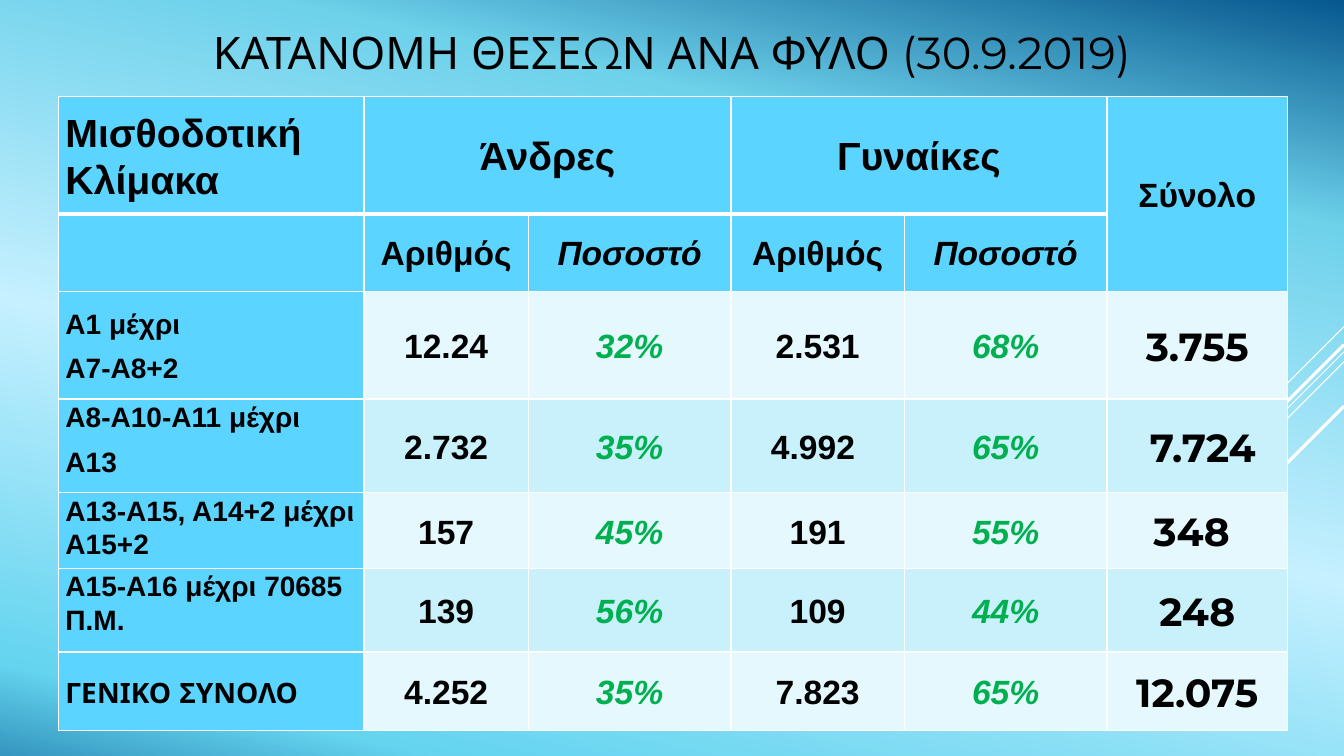
import copy

from lxml import etree
from pptx import Presentation
from pptx.dml.color import RGBColor
from pptx.enum import shapes, text
from pptx.oxml import ns
from pptx.util import Inches, Pt

TITLE = "ΚΑΤΑΝΟΜΗ ΘΕΣΕΩΝ ΑΝΑ ΦΥΛΟ (30.9.2019)"
ROWS = [
    ["Μισθοδοτική Κλίμακα", "Άνδρες", "", "Γυναίκες", "", "Σύνολο"],
    ["", "Αριθμός", "Ποσοστό", "Αριθμός", "Ποσοστό", ""],
    ["Α1 μέχρι\nΑ7-Α8+2", "12.24", "32%", "2.531", "68%", "3.755"],
    ["Α8-Α10-Α11 μέχρι\nΑ13", "2.732", "35%", "4.992 ", "65%", " 7.724"],
    ["Α13-Α15, Α14+2 μέχρι Α15+2", "157", "45%", "191", "55%", "348 "],
    ["Α15-Α16 μέχρι 70685 Π.Μ.", "139", "56%", "109", "44%", "248"],
    ["ΓΕΝΙΚΟ ΣΥΝΟΛΟ", "4.252", "35%", "7.823", "65%", "12.075"],
]
COL_WIDTHS = [3.03, 1.63, 2.01, 1.72, 2.01, 1.79]
ROW_HEIGHTS = [1.16, 0.77, 1.07, 0.93, 0.75, 0.83, 0.78]
MERGES = [((0, 1), (0, 2)), ((0, 3), (0, 4)), ((0, 5), (1, 5))]
TOP_ALIGNED = {(3, 0), (4, 0), (5, 0)}
TOTAL_COL, LAST_ROW = 5, 6

C = {"header": "5BD4FF", "light": "E4F8FD", "tint": "C8F1FB",
     "text": "000000", "percent": "00B050", "line": "FFFFFF"}
BACKGROUND = [(0, "06588E"), (22, "6ED2EB"), (56, "C5F0FF"),
              (91, "64D4EF"), (100, "3596BF")]
# Diagonals at 45 degrees: y at the right edge, horizontal run, weight
DIAGONALS = [(3.24, 1, 0.75), (3.49, 3.26, 0.75), (3.59, 2.07, 0.75),
             (3.42, 1.91, 2.25), (4.03, 1.39, 2.25)]
WIDTH, HEIGHT = 13.33, 7.5


def rgb(name):
    return RGBColor.from_string(C[name])


def paint_background(s):
    fill = s.background.fill
    fill.gradient()
    fill.gradient_angle = 258
    stops = fill.gradient_stops
    first = stops[0]
    first.color.rgb = RGBColor.from_string(BACKGROUND[0][1])
    gs_list = s.background._cSld.find(".//" + ns.qn("a:gsLst"))
    template = copy.deepcopy(gs_list[0])
    for gs in list(gs_list):
        gs_list.remove(gs)
    for pos, color in BACKGROUND:
        gs = copy.deepcopy(template)
        gs.set("pos", str(pos * 1000))
        gs[0].set("val", color)
        gs_list.append(gs)


def add_diagonal(s, y, run, weight):
    line = s.shapes.add_connector(
        shapes.MSO_CONNECTOR.STRAIGHT, Inches(WIDTH), Inches(y),
        Inches(WIDTH - run), Inches(y + run))
    line.line.color.rgb = rgb("line")
    line.line.width = Pt(weight)
    etree.SubElement(line._element.spPr, ns.qn("a:effectLst"))


def set_borders(cell, weights):
    """Draw the left, right, top and bottom borders, ahead of the cell fill."""
    tc_pr = cell._tc.get_or_add_tcPr()
    for i, (side, weight) in enumerate(zip("LRTB", weights)):
        ln = etree.Element(ns.qn("a:ln" + side), w=str(Pt(weight)))
        solid = etree.SubElement(ln, ns.qn("a:solidFill"))
        etree.SubElement(solid, ns.qn("a:srgbClr"), val=C["line"])
        tc_pr.insert(i, ln)


def font_style(row, col):
    """Return size, font name, colour and italic for a cell."""
    percent = row > 0 and col in (2, 4)
    if row == 0:
        size = 24 if col == TOTAL_COL else 28
    elif col == 0:
        size = 20
    else:
        size = 28 if col == TOTAL_COL else 24
    montserrat = (row > 1 and col == TOTAL_COL) or (row, col) == (LAST_ROW, 0)
    color = "percent" if percent and row > 1 else "text"
    return size, "Montserrat" if montserrat else "Arial", color, percent


def fill_color(row, col):
    if row < 2 or col == 0:
        return "header"
    return "tint" if row % 2 else "light"


def format_cell(cell, row, col):
    cell.fill.solid()
    cell.fill.fore_color.rgb = rgb(fill_color(row, col))
    thick = col != TOTAL_COL
    set_borders(cell, (1, 1, 3 if thick and row == 1 else 1,
                       3 if thick and row == 0 else 1))
    cell.margin_left = cell.margin_right = Inches(0.07)
    cell.margin_top, cell.margin_bottom = Inches(0.01), 0
    top = (row, col) in TOP_ALIGNED
    cell.vertical_anchor = text.MSO_ANCHOR.TOP if top else text.MSO_ANCHOR.MIDDLE
    if not ROWS[row][col]:
        return
    cell.text_frame.text = ROWS[row][col]
    size, name, color, italic = font_style(row, col)
    for p in cell.text_frame.paragraphs:
        p.alignment = text.PP_ALIGN.CENTER if col else text.PP_ALIGN.LEFT
        p.line_spacing, p.space_after = 1.07, Pt(8)
        for r in p.runs:
            r.font.size, r.font.name = Pt(size), name
            r.font.bold, r.font.italic = True, italic
            r.font.color.rgb = rgb(color)


def add_title(s):
    tf = s.shapes.add_textbox(0, Inches(-0.14), Inches(WIDTH), Inches(1.31)).text_frame
    tf.word_wrap = True
    tf.vertical_anchor = text.MSO_ANCHOR.MIDDLE
    tf.text = TITLE
    p = tf.paragraphs[0]
    p.alignment = text.PP_ALIGN.CENTER
    font = p.runs[0].font
    font.size, font.name = Pt(32), "Montserrat"
    font.color.rgb = rgb("text")


def add_positions_table(s):
    table = s.shapes.add_table(
        len(ROWS), len(COL_WIDTHS), Inches(0.58), Inches(0.96),
        Inches(sum(COL_WIDTHS)), Inches(sum(ROW_HEIGHTS))).table
    for column, width in zip(table.columns, COL_WIDTHS):
        column.width = Inches(width)
    for table_row, height in zip(table.rows, ROW_HEIGHTS):
        table_row.height = Inches(height)
    for start, end in MERGES:
        table.cell(*start).merge(table.cell(*end))
    for row in range(len(ROWS)):
        for col in range(len(COL_WIDTHS)):
            format_cell(table.cell(row, col), row, col)


def main():
    prs = Presentation()
    prs.slide_width, prs.slide_height = Inches(WIDTH), Inches(HEIGHT)
    s = prs.slides.add_slide(prs.slide_layouts[6])
    paint_background(s)
    for diagonal in DIAGONALS:
        add_diagonal(s, *diagonal)
    add_title(s)
    add_positions_table(s)
    prs.save("out.pptx")


if __name__ == "__main__":
    main()
